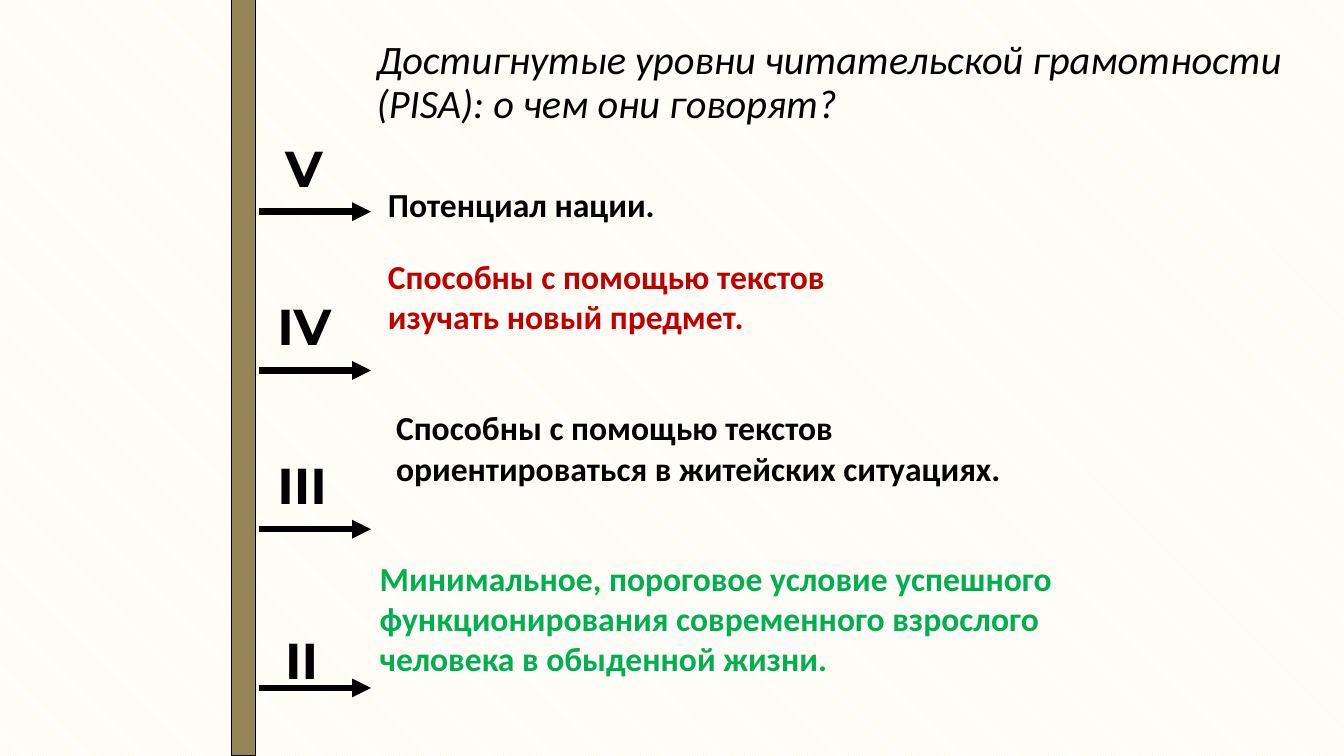
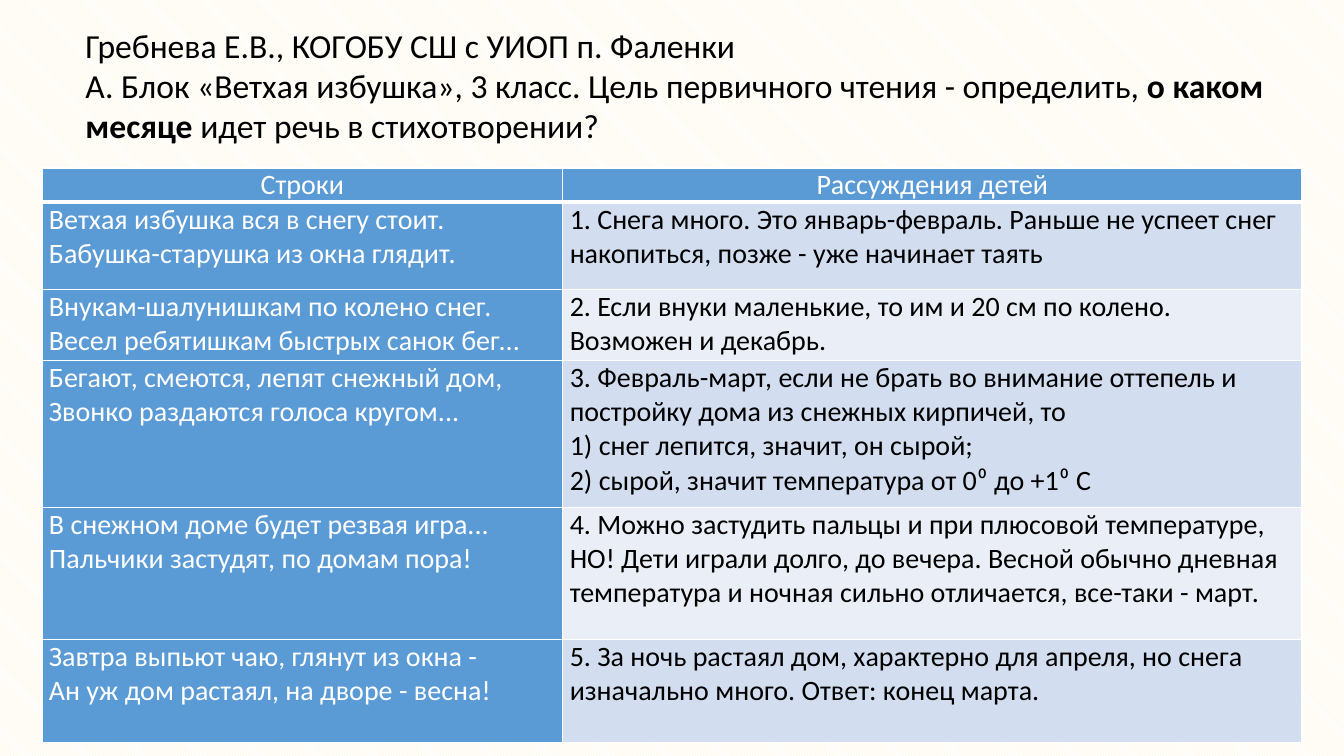
from dataclasses import dataclass
from typing import Any, NamedTuple

from lxml.etree import SubElement
from pptx import Presentation
from pptx.dml.color import RGBColor as Color
from pptx.enum.dml import MSO_PATTERN_TYPE as Pattern
from pptx.enum.shapes import MSO_CONNECTOR as Connector, MSO_SHAPE as Preset
from pptx.enum.text import MSO_ANCHOR as Anchor, PP_ALIGN as Align
from pptx.oxml.ns import qn
from pptx.slide import Slide
from pptx.util import Pt


@dataclass(frozen=True)
class Theme:
    black: str = "000000"
    white: str = "FFFFFF"
    cream: str = "FFF2CC"
    red: str = "C00000"
    green: str = "00B050"
    bronze: str = "968556"
    blue: str = "5B9BD5"
    bands: tuple[str, str] = ("D2DEEF", "EAEFF7")
    text_font: str = "Calibri"
    numeral_font: str = "Montserrat"
    title_size: float = 28.8
    numeral_size: float = 36
    body_size: float = 24
    table_size: float = 20


THEME = Theme()


class Box(NamedTuple):
    left: float
    top: float
    width: float
    height: float

    def lengths(self) -> list[Pt]:
        return [Pt(value) for value in self]


class Span(NamedTuple):
    text: str
    bold: bool = False


@dataclass(frozen=True)
class Style:
    size: float = THEME.body_size
    color: str = THEME.black
    font: str = THEME.text_font
    bold: bool = False
    italic: bool = False


@dataclass(frozen=True)
class Level:
    numeral: str
    numeral_left: float
    numeral_width: float
    numeral_rise: float
    text: str
    text_box: Box
    color: str = THEME.black


class Row(NamedTuple):
    height: float
    lines: str
    reasoning: tuple[str, ...]


SLIDE_WIDTH, SLIDE_HEIGHT = 960, 540
TITLE = "Достигнутые уровни читательской грамотности (PISA): о чем они говорят?"
ARROW_LEFT, ARROW_RIGHT = 185, 265
ARROW_TOP, ARROW_STEP = 151.2, 113.4
NUMERAL_HEIGHT = 50.4

LEVELS = (
    Level("V", 196.5, 57, 57, "Потенциал нации.", Box(270, 128, 275, 36)),
    Level("IV", 191, 68, 57, "Способны с помощью текстов изучать новый предмет.",
          Box(270, 179.3, 363, 65.5), THEME.red),
    Level("III", 191, 79, 57,
          "Способны с помощью текстов ориентироваться в житейских ситуациях.",
          Box(275.8, 287.3, 476, 65.5)),
    Level("II", 196.5, 51, 45.7,
          "Минимальное, пороговое условие успешного функционирования "
          "современного взрослого человека в обыденной жизни.",
          Box(264.2, 394.6, 556, 94.3), THEME.green),
)

INTRODUCTION = (
    (Span("Гребнева Е.В., КОГОБУ СШ с УИОП п. Фаленки"),),
    (Span("А. Блок «Ветхая избушка», 3 класс. Цель первичного чтения - определить, "),
     Span("о каком месяце", True),
     Span(" идет речь в стихотворении?")),
)

COLUMN_WIDTHS = (372, 528)
ROWS = (
    Row(24.5, "Строки", ("Рассуждения детей",)),
    Row(62.5, "Ветхая избушка вся в снегу стоит.\nБабушка-старушка из окна глядит.",
        ("1. Снега много. Это январь-февраль. Раньше не успеет снег накопиться, "
         "позже - уже начинает таять",)),
    Row(50.5, "Внукам-шалунишкам по колено снег.\nВесел ребятишкам быстрых санок бег...",
        ("2. Если внуки маленькие, то им и 20 см по колено. Возможен и декабрь.",)),
    Row(105, "Бегают, смеются, лепят снежный дом,\nЗвонко раздаются голоса кругом...",
        ("3. Февраль-март, если не брать во внимание оттепель и постройку дома "
         "из снежных кирпичей, то",
         "1) снег лепится, значит, он сырой;",
         "2) сырой, значит температура от 0⁰ до +1⁰ С")),
    Row(94.5, "В снежном доме будет резвая игра...\nПальчики застудят, по домам пора!",
        ("4. Можно застудить пальцы и при плюсовой температуре, НО! Дети играли "
         "долго, до вечера. Весной обычно дневная температура и ночная сильно "
         "отличается, все-таки - март.",)),
    Row(73.5, "Завтра выпьют чаю, глянут из окна -\nАн уж дом растаял, на дворе - весна!",
        ("5. За ночь растаял дом, характерно для апреля, но снега изначально "
         "много. Ответ: конец марта.",)),
)


def set_values(target: Any, values: dict[str, Any]) -> None:
    for name, value in values.items():
        setattr(target, name, value)


def rgb(color: str) -> Color:
    return Color.from_string(color)


def fill_solid(target: Any, color: str) -> None:
    target.fill.solid()
    target.fill.fore_color.rgb = rgb(color)


def write_text(frame: Any, paragraphs: tuple[tuple[Span, ...], ...], style: Style,
               **layout: Any) -> None:
    for index, spans in enumerate(paragraphs):
        paragraph = frame.add_paragraph() if index else frame.paragraphs[0]
        set_values(paragraph, layout)
        for span in spans:
            for position, line in enumerate(span.text.split("\n")):
                if position:
                    paragraph.add_line_break()
                run = paragraph.add_run()
                run.text = line
                set_values(run.font, {
                    "name": style.font, "size": Pt(style.size),
                    "bold": style.bold or span.bold, "italic": style.italic,
                })
                run.font.color.rgb = rgb(style.color)


def add_text(slide: Slide, box: Box, paragraphs: tuple[tuple[Span, ...], ...],
             style: Style, anchor: Anchor = Anchor.TOP, **layout: Any) -> None:
    frame = slide.shapes.add_textbox(*box.lengths()).text_frame
    set_values(frame, {"word_wrap": True, "vertical_anchor": anchor})
    write_text(frame, paragraphs, style, **layout)


def add_slide(presentation: Any) -> Slide:
    slide = presentation.slides.add_slide(presentation.slide_layouts[6])
    fill = slide.background.fill
    fill.patterned()
    fill.pattern = Pattern.LIGHT_DOWNWARD_DIAGONAL
    fill.fore_color.rgb = rgb(THEME.cream)
    fill.back_color.rgb = rgb(THEME.white)
    return slide


def add_axis(slide: Slide) -> None:
    axis = slide.shapes.add_shape(
        Preset.RECTANGLE, *Box(165.6, 0, 17.3, SLIDE_HEIGHT).lengths())
    axis.shadow.inherit = False
    fill_solid(axis, THEME.bronze)
    axis.line.color.rgb = rgb(THEME.black)
    axis.line.width = Pt(0.75)


def add_arrow(slide: Slide, top: float) -> None:
    arrow = slide.shapes.add_connector(
        Connector.STRAIGHT, Pt(ARROW_LEFT), Pt(top), Pt(ARROW_RIGHT), Pt(top))
    arrow.line.color.rgb = rgb(THEME.black)
    arrow.line.width = Pt(4.5)
    SubElement(arrow.line._get_or_add_ln(), qn("a:tailEnd"), type="triangle")
    SubElement(arrow._element.spPr, qn("a:effectLst"))


def add_level(slide: Slide, level: Level, top: float) -> None:
    add_arrow(slide, top)
    numeral_box = Box(level.numeral_left, top - level.numeral_rise,
                      level.numeral_width, NUMERAL_HEIGHT)
    add_text(slide, numeral_box, ((Span(level.numeral),),),
             Style(THEME.numeral_size, font=THEME.numeral_font, bold=True))
    add_text(slide, level.text_box, ((Span(level.text),),),
             Style(color=level.color, bold=True))


def add_borders(cell: Any, bottom: float) -> None:
    properties = cell._tc.get_or_add_tcPr()
    for side, width in {"L": 1, "R": 1, "T": 1, "B": bottom}.items():
        line = SubElement(properties, qn(f"a:ln{side}"), w=str(int(Pt(width))))
        SubElement(SubElement(line, qn("a:solidFill")), qn("a:srgbClr"), val=THEME.white)


def add_reasoning_table(slide: Slide) -> None:
    box = Box(30, 120, sum(COLUMN_WIDTHS), sum(row.height for row in ROWS))
    table = slide.shapes.add_table(len(ROWS), len(COLUMN_WIDTHS), *box.lengths()).table
    for column, width in zip(table.columns, COLUMN_WIDTHS):
        column.width = Pt(width)
    for row_index, row in enumerate(ROWS):
        table.rows[row_index].height = Pt(row.height)
        is_header = row_index == 0
        for column_index, texts in enumerate(((row.lines,), row.reasoning)):
            cell = table.cell(row_index, column_index)
            is_blue = is_header or column_index == 0
            set_values(cell, {"margin_left": Pt(5), "margin_right": Pt(5),
                              "margin_top": Pt(0), "margin_bottom": Pt(0)})
            add_borders(cell, 3 if is_header else 1)
            fill_solid(cell, THEME.blue if is_blue else THEME.bands[(row_index - 1) % 2])
            write_text(cell.text_frame, tuple((Span(text),) for text in texts),
                       Style(THEME.table_size, THEME.white if is_blue else THEME.black),
                       alignment=Align.CENTER if is_header else Align.LEFT)


def build_levels_slide(presentation: Any) -> None:
    slide = add_slide(presentation)
    add_text(slide, Box(262, 23, 698, 73.5), ((Span(TITLE),),),
             Style(THEME.title_size, italic=True), Anchor.MIDDLE, line_spacing=0.9)
    add_axis(slide)
    for index, level in enumerate(LEVELS):
        add_level(slide, level, ARROW_TOP + index * ARROW_STEP)


def build_poem_slide(presentation: Any) -> None:
    slide = add_slide(presentation)
    add_reasoning_table(slide)
    add_text(slide, Box(54, 14, 864, 96), INTRODUCTION, Style())


def main() -> None:
    presentation = Presentation()
    set_values(presentation, {"slide_width": Pt(SLIDE_WIDTH),
                              "slide_height": Pt(SLIDE_HEIGHT)})
    build_levels_slide(presentation)
    build_poem_slide(presentation)
    presentation.save("out.pptx")


if __name__ == "__main__":
    main()
